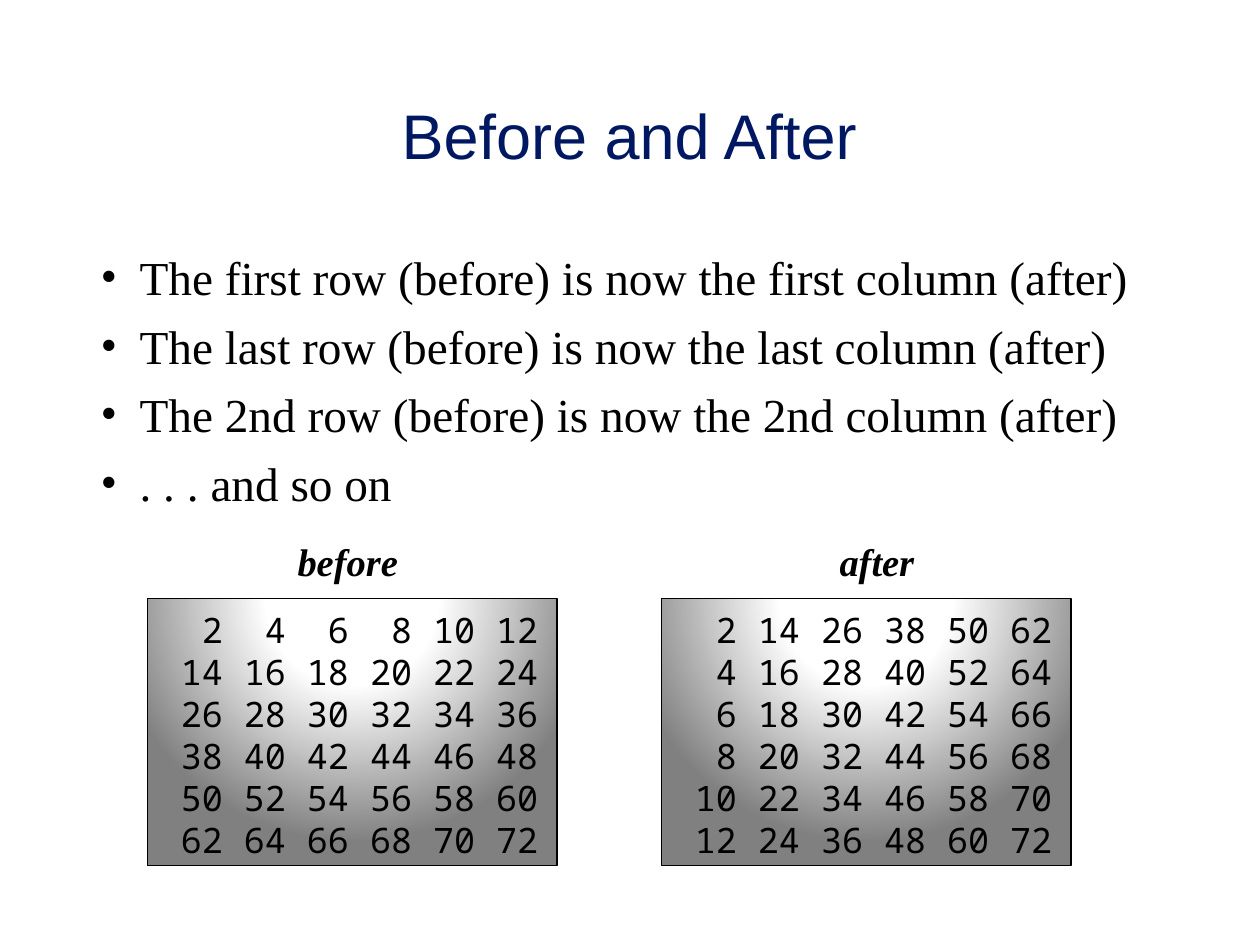
"""Build a slide comparing a number matrix before and after transposition."""
import pptx
import pptx.dml.color
import pptx.enum.text
import pptx.enum.shapes
import pptx.oxml
import pptx.oxml.ns
import pptx.util
from pptx.util import Inches, Pt

RGBColor = pptx.dml.color.RGBColor
PP_ALIGN = pptx.enum.text.PP_ALIGN
MSO_ANCHOR = pptx.enum.text.MSO_ANCHOR

NAVY = RGBColor(0x00, 0x17, 0x62)
BLACK = RGBColor(0x00, 0x00, 0x00)
WHITE = RGBColor(0xFF, 0xFF, 0xFF)
GRAY = RGBColor(0x80, 0x80, 0x80)

TITLE = "Before and After"
POINTS = [
    "The first row (before) is now the first column (after)",
    "The last row (before) is now the last column (after)",
    "The 2nd row (before) is now the 2nd column (after)",
    ". . . and so on",
]
SIZE = 6
BEFORE = [[2 * (SIZE * row + col + 1) for col in range(SIZE)] for row in range(SIZE)]
AFTER = list(zip(*BEFORE))
MATRICES = [("before", 2.76, 1.17, BEFORE), ("after", 6.96, 5.25, AFTER)]
GRADIENT = [(0, WHITE), (35, WHITE), (100, GRAY)]
LABEL_WIDTH = 2


def write(frame, lines, font, size, color, align=PP_ALIGN.LEFT):
    frame.word_wrap = True
    frame.text = "\n".join(lines)
    for paragraph in frame.paragraphs:
        paragraph.alignment = align
        for run in paragraph.runs:
            run.font.name = font
            run.font.size = Pt(size)
            run.font.color.rgb = color
    return frame


def add_text(slide, box, *style):
    area = slide.shapes.add_textbox(*map(Inches, box))
    return write(area.text_frame, *style)


def add_bullet(paragraph):
    properties = paragraph._p.get_or_add_pPr()
    properties.set("marL", str(Inches(0.43)))
    properties.set("indent", str(Inches(-0.31)))
    namespace = pptx.oxml.ns.nsdecls("a")
    properties.append(pptx.oxml.parse_xml(f'<a:buFont {namespace} typeface="Times New Roman"/>'))
    properties.append(pptx.oxml.parse_xml(f'<a:buChar {namespace} char="•"/>'))


def fill_radially(shape):
    stops = "".join(
        f'<a:gs pos="{position * 1000}"><a:srgbClr val="{color}"/></a:gs>'
        for position, color in GRADIENT
    )
    gradient = pptx.oxml.parse_xml(
        f'<a:gradFill {pptx.oxml.ns.nsdecls("a")} rotWithShape="1"><a:gsLst>{stops}</a:gsLst>'
        '<a:path path="circle"><a:fillToRect l="50000" t="-80000" r="50000" b="180000"/>'
        "</a:path></a:gradFill>"
    )
    shape._element.spPr.find(pptx.oxml.ns.qn("a:prstGeom")).addnext(gradient)


def add_matrix(slide, left, rows):
    panel = slide.shapes.add_shape(
        pptx.enum.shapes.MSO_SHAPE.RECTANGLE,
        Inches(left), Inches(4.75), Inches(3.25), Inches(2.12),
    )
    panel.shadow.inherit = False
    panel.line.color.rgb = BLACK
    panel.line.width = Pt(0.75)
    fill_radially(panel)
    lines = ["".join(f"{number:3d}" for number in row) for row in rows]
    frame = write(panel.text_frame, lines, "Noto Sans Mono", 20, BLACK)
    frame.vertical_anchor = MSO_ANCHOR.TOP
    frame.margin_top = Inches(0.08)
    frame.margin_bottom = Inches(0.02)
    for paragraph in frame.paragraphs:
        paragraph.line_spacing = Pt(24)


def main():
    deck = pptx.Presentation()
    deck.slide_width, deck.slide_height = Inches(10), Inches(7.5)
    slide = deck.slides.add_slide(deck.slide_layouts[6])

    title = add_text(slide, (0.33, 0.38, 9.33, 1.46), [TITLE], "Arial", 36, NAVY, PP_ALIGN.CENTER)
    title.vertical_anchor = MSO_ANCHOR.MIDDLE
    title.paragraphs[0].line_spacing = 0.87

    points = add_text(slide, (0.58, 1.92, 9, 2.3), POINTS, "Times New Roman", 27, BLACK)
    for point in points.paragraphs:
        point.space_before = Pt(6.8)
        add_bullet(point)

    for name, center, left, rows in MATRICES:
        label = add_text(
            slide, (center - LABEL_WIDTH / 2, 4.22, LABEL_WIDTH, 0.44),
            [name], "Times New Roman", 22, BLACK, PP_ALIGN.CENTER,
        )
        label_font = label.paragraphs[0].runs[0].font
        label_font.bold = label_font.italic = True
        add_matrix(slide, left, rows)

    deck.save("out.pptx")


if __name__ == "__main__":
    main()
